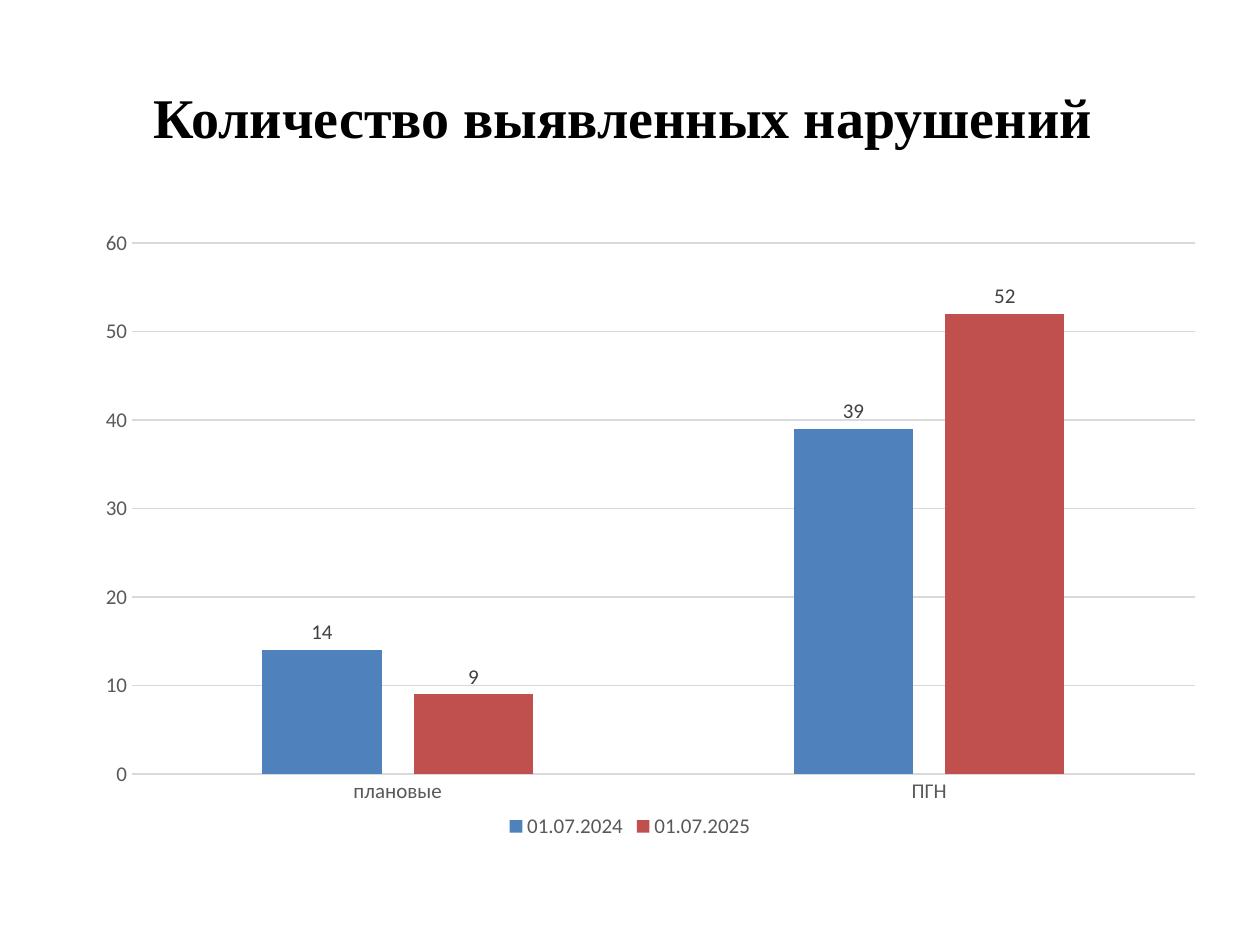
from dataclasses import dataclass

from lxml import etree
from pptx import Presentation
from pptx.chart.chart import Chart
from pptx.chart.data import CategoryChartData
from pptx.dml.color import RGBColor
from pptx.enum.chart import XL_CHART_TYPE, XL_LABEL_POSITION, XL_LEGEND_POSITION, XL_TICK_MARK
from pptx.enum.text import MSO_ANCHOR, PP_ALIGN
from pptx.oxml.ns import qn
from pptx.slide import Slide
from pptx.text.text import Font
from pptx.util import Emu, Pt

CLUSTERED = XL_CHART_TYPE.COLUMN_CLUSTERED
OUTSIDE_END = XL_LABEL_POSITION.OUTSIDE_END
BOTTOM = XL_LEGEND_POSITION.BOTTOM
NO_TICK = XL_TICK_MARK.NONE
MIDDLE = MSO_ANCHOR.MIDDLE
CENTER = PP_ALIGN.CENTER

EMU_PER_PX = 914400 / 126
SLIDE_WIDTH, SLIDE_HEIGHT = 1260, 945

BLACK = RGBColor(0x00, 0x00, 0x00)
BLUE = RGBColor(0x4F, 0x81, 0xBD)
RED = RGBColor(0xC0, 0x50, 0x4D)
AXIS_GRAY = RGBColor(0x59, 0x59, 0x59)
LABEL_GRAY = RGBColor(0x40, 0x40, 0x40)
GRID_GRAY = RGBColor(0xD9, 0xD9, 0xD9)

TITLE_FONT = "Times New Roman"
CHART_FONT = "Calibri"


@dataclass(frozen=True)
class Area:
    left: int
    top: int
    width: int
    height: int

    def emu(self) -> tuple[Emu, ...]:
        return tuple(px(n) for n in (self.left, self.top, self.width, self.height))


@dataclass(frozen=True)
class Period:
    name: str
    values: tuple[int, ...]
    color: RGBColor


TITLE_AREA = Area(63, 38, 1134, 157)
CHART_AREA = Area(63, 220, 1134, 624)
PLOT_AREA = Area(69, 23, 1063, 531)  # measured from the chart's own corner

CATEGORIES = ("плановые", "ПГН")
PERIODS = (
    Period("01.07.2024", (14, 39), BLUE),
    Period("01.07.2025", (9, 52), RED),
)


def px(length: int) -> Emu:
    return Emu(round(length * EMU_PER_PX))


def set_font(font: Font, *, name: str = CHART_FONT, size: int = 12,
             color: RGBColor = AXIS_GRAY, bold: bool = False) -> None:
    font.name = name
    font.size = Pt(size)
    font.bold = bold
    font.color.rgb = color


def add_text(slide: Slide, area: Area, text: str, **font_format) -> None:
    """Add centred, wrapped text; keyword arguments go to set_font."""
    frame = slide.shapes.add_textbox(*area.emu()).text_frame
    frame.word_wrap = True
    frame.vertical_anchor = MIDDLE
    para = frame.paragraphs[0]
    para.alignment = CENTER
    span = para.add_run()
    span.text = text
    set_font(span.font, **font_format)


def place_plot(chart: Chart, plot: Area, frame: Area) -> None:
    """Fix the inner plot area, which needs a manual layout in XML."""
    plot_area = chart._chartSpace.find(".//" + qn("c:plotArea"))
    for old_layout in plot_area.findall(qn("c:layout")):
        plot_area.remove(old_layout)
    layout = etree.Element(qn("c:layout"))
    manual = etree.SubElement(layout, qn("c:manualLayout"))
    settings = {
        "layoutTarget": "inner",
        "xMode": "edge",
        "yMode": "edge",
        "x": plot.left / frame.width,
        "y": plot.top / frame.height,
        "w": plot.width / frame.width,
        "h": plot.height / frame.height,
    }
    for tag, value in settings.items():
        etree.SubElement(manual, qn(f"c:{tag}")).set("val", str(value))
    plot_area.insert(0, layout)


def style_axes(chart: Chart) -> None:
    for axis in (chart.category_axis, chart.value_axis):
        axis.major_tick_mark = axis.minor_tick_mark = NO_TICK
        set_font(axis.tick_labels.font)
    chart.category_axis.has_major_gridlines = False
    chart.value_axis.has_major_gridlines = True
    chart.value_axis.format.line.fill.background()
    for part in (chart.category_axis, chart.value_axis.major_gridlines):
        part.format.line.color.rgb = GRID_GRAY
        part.format.line.width = Pt(0.75)


def style_series(chart: Chart) -> None:
    plot = chart.plots[0]
    plot.vary_by_categories = False
    plot.gap_width = 219
    plot.overlap = -27
    for series, period in zip(plot.series, PERIODS):
        series.invert_if_negative = False
        series.format.fill.solid()
        series.format.fill.fore_color.rgb = period.color
        labels = series.data_labels
        labels.show_value = True
        labels.position = OUTSIDE_END
        set_font(labels.font, color=LABEL_GRAY)


def add_violations_chart(slide: Slide) -> None:
    data = CategoryChartData()
    data.categories = CATEGORIES
    for period in PERIODS:
        data.add_series(period.name, period.values)
    chart = slide.shapes.add_chart(CLUSTERED, *CHART_AREA.emu(), data).chart
    set_font(chart.font, size=10, color=BLACK)
    chart.has_title = False
    chart.has_legend = True
    chart.legend.position = BOTTOM
    chart.legend.include_in_layout = False
    set_font(chart.legend.font)
    style_axes(chart)
    style_series(chart)
    place_plot(chart, PLOT_AREA, CHART_AREA)


def main() -> None:
    deck = Presentation()
    deck.slide_width, deck.slide_height = px(SLIDE_WIDTH), px(SLIDE_HEIGHT)
    slide = deck.slides.add_slide(deck.slide_layouts[6])
    add_text(slide, TITLE_AREA, "Количество выявленных нарушений ",
             name=TITLE_FONT, size=32, color=BLACK, bold=True)
    add_violations_chart(slide)
    deck.save("out.pptx")


if __name__ == "__main__":
    main()
